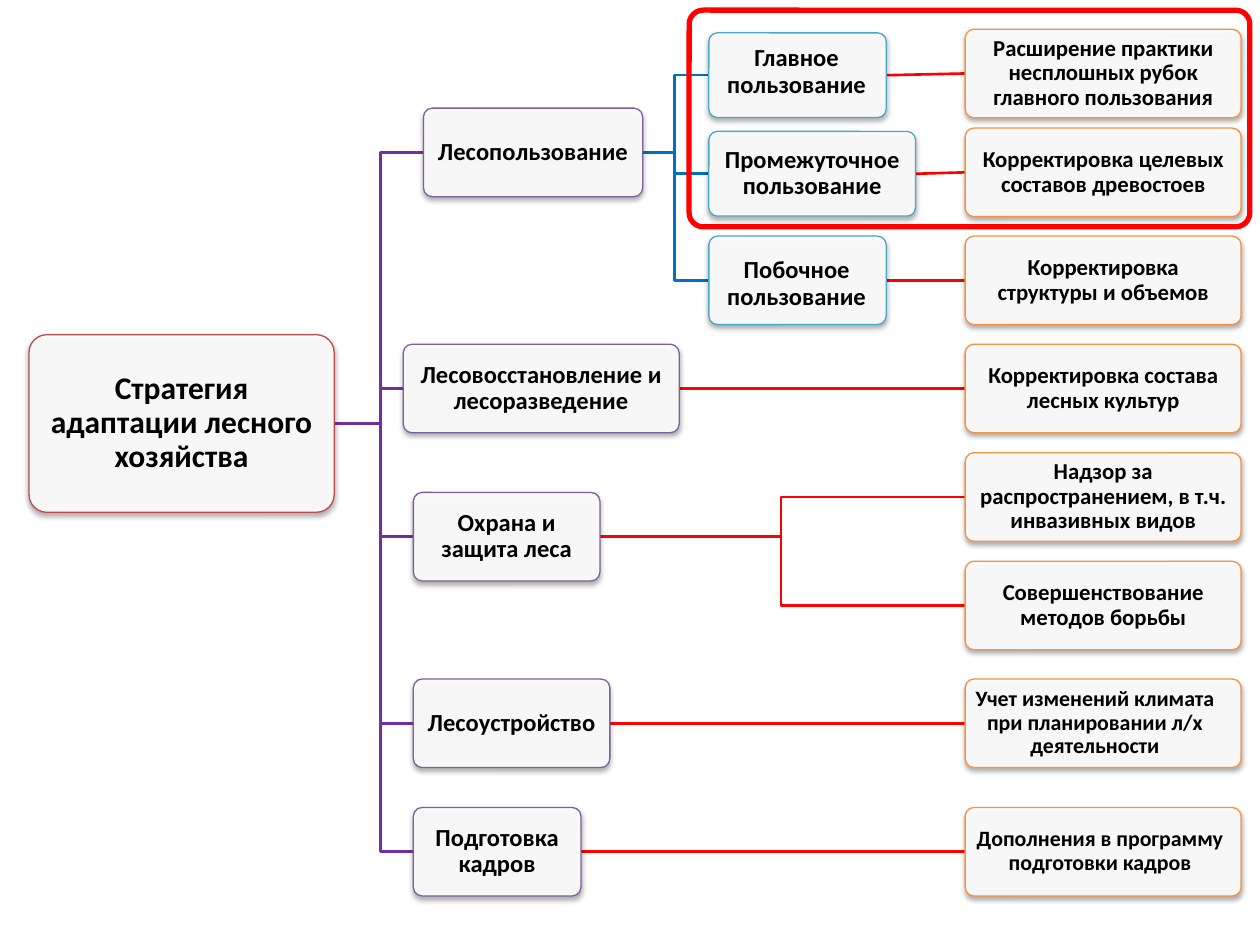
from dataclasses import dataclass
from typing import Optional

from lxml.etree import SubElement
from pptx import Presentation
from pptx.dml.color import RGBColor
from pptx.enum.shapes import MSO_CONNECTOR, MSO_SHAPE
from pptx.enum.text import MSO_ANCHOR, PP_ALIGN
from pptx.oxml.ns import qn
from pptx.util import Pt

WHITE = RGBColor(0xFF, 0xFF, 0xFF)
BLACK = RGBColor(0x00, 0x00, 0x00)
ROOT_BORDER = RGBColor(0xBF, 0x4C, 0x48)
BRANCH_BORDER = RGBColor(0x7D, 0x60, 0xA0)
USE_BORDER = RGBColor(0x46, 0xAA, 0xC5)
OUTCOME_BORDER = RGBColor(0xF6, 0x92, 0x40)
PURPLE = RGBColor(0x70, 0x30, 0xA0)
BLUE = RGBColor(0x00, 0x70, 0xC0)
RED = RGBColor(0xFF, 0x00, 0x00)

ROW_HEIGHT = 50.6
OUTCOME_LEFT = 551.5
OUTCOME_WIDTH = 157.7


@dataclass(frozen=True)
class Node:
    """A box placed by its left edge and vertical centre; insets run left, top, right, bottom."""
    text: str
    left: float
    middle: float
    width: float
    border: RGBColor
    height: float = ROW_HEIGHT
    size: float = 14
    insets: tuple[float, float, float, float] = (4.2, 1, 4.2, 1)

    @property
    def right(self) -> float:
        return self.left + self.width


@dataclass(frozen=True)
class Link:
    """A line between two nodes, bent at the trunk position when there is one."""
    source: Node
    target: Node
    color: RGBColor
    trunk: Optional[float] = None


def branch(text: str, left: float, middle: float, width: float) -> Node:
    return Node(text, left, middle, width, BRANCH_BORDER)


def outcome(text: str, middle: float, size: float = 13,
            insets: tuple[float, float, float, float] = (5.6, 1, 5.6, 1)) -> Node:
    return Node(text, OUTCOME_LEFT, middle, OUTCOME_WIDTH, OUTCOME_BORDER,
                size=size, insets=insets)


ROOT = Node("Стратегия адаптации лесного хозяйства", 16.6, 242, 174.4, ROOT_BORDER,
            height=101.5, size=18, insets=(5, 5, 5, 5))

FOREST_USE = branch("Лесопользование", 242, 87.1, 125.3)
REGROWTH = branch("Лесовосстановление и лесоразведение", 230.4, 222, 157.7)
PROTECTION = branch("Охрана и защита леса", 236.2, 306.7, 106.6)
PLANNING = branch("Лесоустройство", 236.2, 413.3, 112.3)
TRAINING = branch("Подготовка кадров", 236.2, 486.7, 95.8)
BRANCHES = [FOREST_USE, REGROWTH, PROTECTION, PLANNING, TRAINING]

MAIN_USE = Node("Главное пользование", 405.1, 43, 101.3, USE_BORDER,
                height=48.4, insets=(4, 1, 5, 4.6))
THINNING_USE = Node("Промежуточное пользование", 405.1, 99.3, 118.1, USE_BORDER, height=48.4)
SIDE_USE = Node("Побочное пользование", 405.1, 160.2, 101.3, USE_BORDER,
                insets=(4, 5, 5, 1))
USES = [MAIN_USE, THINNING_USE, SIDE_USE]

SELECTIVE_CUTTING = outcome("Расширение практики несплошных рубок главного пользования", 42)
STAND_MIX = outcome("Корректировка целевых составов древостоев", 98.5)
VOLUMES = outcome("Корректировка структуры и объемов", 160.2)
CROP_MIX = outcome("Корректировка состава лесных культур", 222)
MONITORING = outcome("Надзор за распространением, в т.ч. инвазивных видов", 284)
CONTROL = outcome("Совершенствование методов борьбы", 346)
CLIMATE = outcome("Учет изменений климата при планировании л/х деятельности",
                  413.3, 12.5, (0, 1, 9.4, 1))
CURRICULUM = outcome("Дополнения в программу подготовки кадров",
                     486.7, 12.5, (1.4, 1, 5, 1))
OUTCOMES = [SELECTIVE_CUTTING, STAND_MIX, VOLUMES, CROP_MIX,
            MONITORING, CONTROL, CLIMATE, CURRICULUM]

LINKS = (
    [Link(ROOT, node, PURPLE, 217.3) for node in BRANCHES]
    + [Link(FOREST_USE, node, BLUE, 385.5) for node in USES]
    + [Link(PROTECTION, node, RED, 446.4) for node in (MONITORING, CONTROL)]
    + [Link(source, target, RED) for source, target in (
        (MAIN_USE, SELECTIVE_CUTTING), (THINNING_USE, STAND_MIX), (SIDE_USE, VOLUMES),
        (REGROWTH, CROP_MIX), (PLANNING, CLIMATE), (TRAINING, CURRICULUM))]
)


def set_attributes(target, values: dict) -> None:
    for name, value in values.items():
        setattr(target, name, value)


def add_rounded(slide, left: float, top: float, width: float, height: float,
                corner: float, color: RGBColor, weight: float):
    shape = slide.shapes.add_shape(MSO_SHAPE.ROUNDED_RECTANGLE,
                                   Pt(left), Pt(top), Pt(width), Pt(height))
    shape.adjustments[0] = corner
    shape.shadow.inherit = False
    shape.line.color.rgb = color
    shape.line.width = Pt(weight)
    return shape


def add_soft_shadow(shape) -> None:
    effects = shape._element.spPr.find(qn("a:effectLst"))
    shadow = SubElement(effects, qn("a:outerShdw"), blurRad=str(Pt(3.1)),
                        dist=str(Pt(1.8)), dir="5400000", rotWithShape="0")
    color = SubElement(shadow, qn("a:srgbClr"), val=str(BLACK))
    SubElement(color, qn("a:alpha"), val="35000")


def draw_node(slide, node: Node) -> None:
    box = add_rounded(slide, node.left, node.middle - node.height / 2,
                      node.width, node.height, 0.1, node.border, 0.75)
    box.fill.solid()
    box.fill.fore_color.rgb = WHITE
    fill_color = box._element.spPr.find(qn("a:solidFill")).find(qn("a:srgbClr"))
    SubElement(fill_color, qn("a:alpha"), val="90000")
    add_soft_shadow(box)

    frame = box.text_frame
    sides = ("margin_left", "margin_top", "margin_right", "margin_bottom")
    set_attributes(frame, {side: Pt(inset) for side, inset in zip(sides, node.insets)})
    set_attributes(frame, {"word_wrap": True, "vertical_anchor": MSO_ANCHOR.MIDDLE})
    para = frame.paragraphs[0]
    set_attributes(para, {"alignment": PP_ALIGN.CENTER, "line_spacing": 0.9})
    span = para.add_run()
    span.text = node.text
    set_attributes(span.font, {"name": "Calibri", "size": Pt(node.size), "bold": True})
    span.font.color.rgb = BLACK


def draw_link(slide, link: Link) -> None:
    start, end = link.source.right, link.target.left
    kind = MSO_CONNECTOR.STRAIGHT if link.trunk is None else MSO_CONNECTOR.ELBOW
    line = slide.shapes.add_connector(kind, Pt(start), Pt(link.source.middle),
                                      Pt(end), Pt(link.target.middle))
    line.line.color.rgb = link.color
    line.line.width = Pt(1.5)
    properties = line._element.spPr
    SubElement(properties, qn("a:effectLst"))
    if link.trunk is not None:
        bend = round((link.trunk - start) / (end - start) * 100000)
        guides = properties.find(qn("a:prstGeom")).find(qn("a:avLst"))
        SubElement(guides, qn("a:gd"), name="adj1", fmla=f"val {bend}")


def main() -> None:
    deck = Presentation()
    set_attributes(deck, {"slide_width": Pt(720), "slide_height": Pt(540)})
    page = deck.slides.add_slide(deck.slide_layouts[6])
    for link in LINKS:
        draw_link(page, link)
    for node in [ROOT, *BRANCHES, *USES, *OUTCOMES]:
        draw_node(page, node)
    highlight = add_rounded(page, 393.8, 5.8, 320.4, 123.8, 0.065, RED, 3)
    highlight.fill.background()
    deck.save("out.pptx")


if __name__ == "__main__":
    main()
